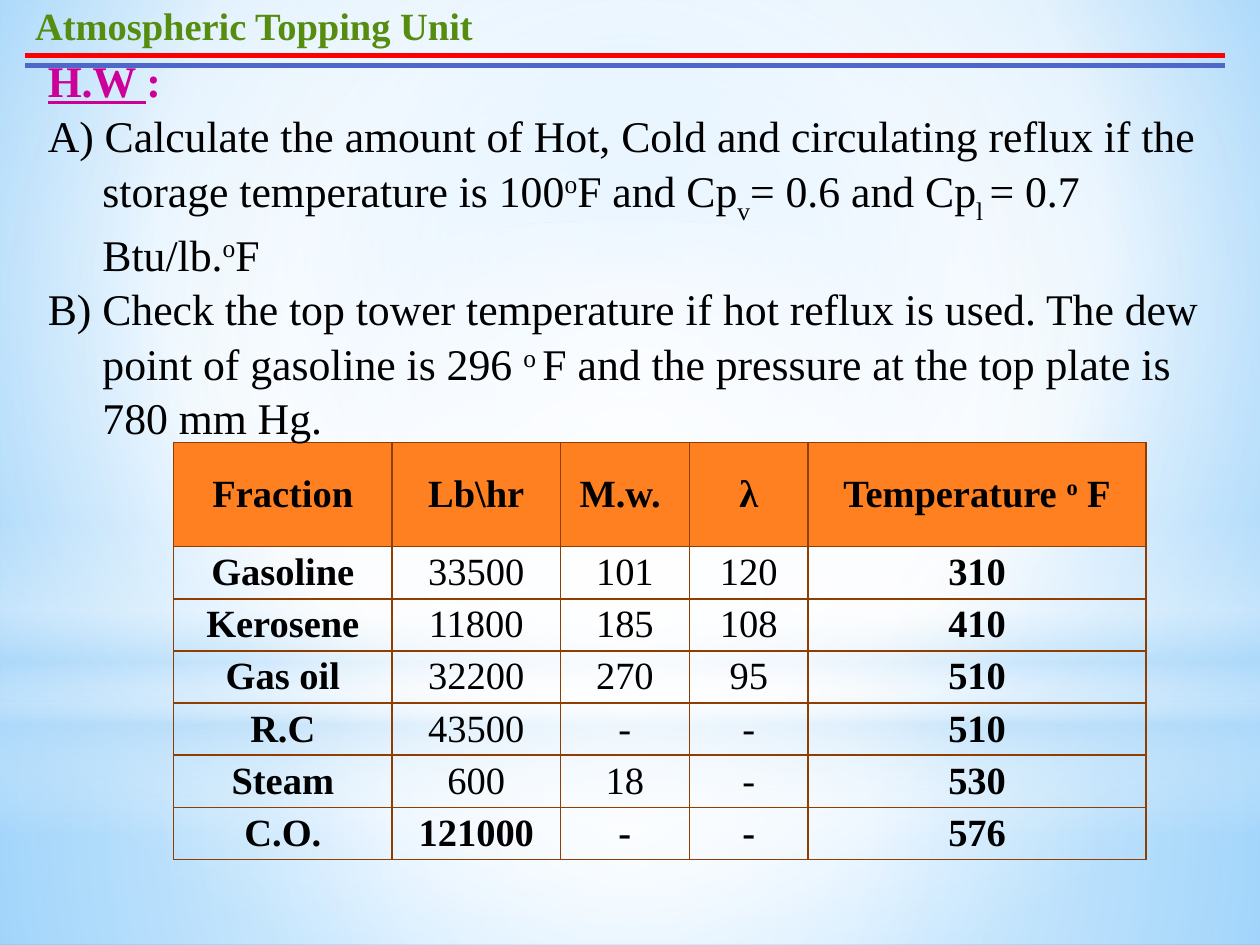
from lxml import etree
from pptx import Presentation
from pptx.dml.color import RGBColor
from pptx.enum.shapes import MSO_CONNECTOR, MSO_SHAPE
from pptx.enum.text import MSO_ANCHOR, MSO_AUTO_SIZE, PP_ALIGN
from pptx.oxml import parse_xml
from pptx.oxml.ns import nsdecls, qn
from pptx.util import Pt

RECTANGLE, OVAL = MSO_SHAPE.RECTANGLE, MSO_SHAPE.OVAL
STRAIGHT = MSO_CONNECTOR.STRAIGHT
MIDDLE, TOP = MSO_ANCHOR.MIDDLE, MSO_ANCHOR.TOP
CENTER = PP_ALIGN.CENTER
FIT_SHAPE = MSO_AUTO_SIZE.SHAPE_TO_FIT_TEXT

FONT = "Times New Roman"
SUPER, SUB = 30, -30
HANGING_INDENT = 31.25

# Each line of the exercise: (is it indented, its pieces of text)
EXERCISE = [
    (False, ["A) Calculate the amount of Hot, Cold and circulating reflux if the"]),
    (True, ["storage temperature is 100", ("o", SUPER), "F and Cp", ("v", SUB),
            "= 0.6 and Cp", ("l ", SUB), "= 0.7"]),
    (True, ["Btu/lb.", ("o", SUPER), "F"]),
    (False, ["B) Check the top tower temperature if hot reflux is used. The dew"]),
    (True, ["point of gasoline is 296 ", ("o ", SUPER),
            "F and the pressure at the top plate is"]),
    (True, ["780 mm Hg."]),
]

COLUMN_WIDTHS = [124.8, 96.3, 73.6, 68, 193]
HEADER_HEIGHT, ROW_HEIGHT = 59.6, 29.8
FRACTIONS = [
    ["Fraction", "Lb\\hr", "M.w. ", "λ", ["Temperature ", ("o", SUPER), " F"]],
    ["Gasoline", "33500", "101", "120", "310"],
    ["Kerosene", "11800", "185", "108", "410"],
    ["Gas oil", "32200", "270", "95", "510"],
    ["R.C", "43500", "-", "-", "510"],
    ["Steam", "600", "18", "-", "530"],
    ["C.O.", "121000", "-", "-", "576"],
]


def color(value):
    return RGBColor.from_string(value)


def set_gradient(fill, properties, stops, center=None):
    """Radial around center (left, top, right, bottom), else top to bottom."""
    fill.solid()
    stop_xml = "".join(
        f'<a:gs pos="{position * 1000}"><a:srgbClr val="{value}">'
        f'<a:alpha val="{alpha * 1000}"/></a:srgbClr></a:gs>'
        for position, value, alpha in stops)
    if center:
        left, top, right, bottom = (side * 1000 for side in center)
        direction = (f'<a:path path="circle"><a:fillToRect l="{left}" t="{top}" '
                     f'r="{right}" b="{bottom}"/></a:path>')
    else:
        direction = '<a:lin ang="5400000" scaled="0"/>'
    gradient = parse_xml(f'<a:gradFill {nsdecls("a")} rotWithShape="1">'
                         f'<a:gsLst>{stop_xml}</a:gsLst>{direction}</a:gradFill>')
    properties.replace(properties.find(qn("a:solidFill")), gradient)


def add_glow(page, kind, top, height, stops, center=None):
    glow = page.shapes.add_shape(kind, 0, Pt(top), Pt(720), Pt(height))
    glow.shadow.inherit = False
    glow.line.fill.background()
    set_gradient(glow.fill, glow._element.spPr, stops, center)


def add_background(page):
    background = page.background.fill
    background.solid()
    set_gradient(background, page._element.cSld.bg.bgPr,
                 [(0, "9ED5FF", 100), (60, "FFFFFF", 100), (100, "5BB9FF", 100)],
                 (20, 10, 20, 60))
    middle = (50, 50, 50, 50)
    add_glow(page, RECTANGLE, 402, 138,
             [(0, "FFFFFF", 91), (37, "FFFFFF", 76), (100, "B4DCFA", 79)], middle)
    add_glow(page, RECTANGLE, 0, 402,
             [(0, "FFFFFF", 89), (48, "FFFFFF", 62), (100, "B4DCFA", 79)], middle)
    add_glow(page, RECTANGLE, 297, 180,
             [(0, "FFFFFF", 0), (29, "FFFFFF", 30), (45, "B4DCFA", 40),
              (55, "FFFFFF", 26), (65, "B4DCFA", 60), (100, "FFFFFF", 0)])
    add_glow(page, OVAL, 126, 402, [(0, "FFFFFF", 100), (56, "FFFFFF", 0)], middle)


def add_rule(page, y, line_color):
    rule = page.shapes.add_connector(STRAIGHT, Pt(14.4), Pt(y), Pt(700), Pt(y))
    rule.line.color.rgb = color(line_color)
    rule.line.width = Pt(3)
    etree.SubElement(rule._element.spPr, qn("a:effectLst"))


def add_text_box(page, left, top, width, height, anchor):
    box = page.shapes.add_textbox(Pt(left), Pt(top), Pt(width), Pt(height))
    frame = box.text_frame
    frame.word_wrap = True
    frame.auto_size = FIT_SHAPE
    frame.vertical_anchor = anchor
    return frame


def write(para, pieces, size, text_color="000000", bold=False):
    para.font.name = FONT
    para.font.size = Pt(size)
    para.font.bold = bold
    para.font.color.rgb = color(text_color)
    for piece in pieces:
        text, baseline = (piece, 0) if isinstance(piece, str) else piece
        span = para.add_run()
        span.text = text
        if baseline:
            span._r.get_or_add_rPr().set("baseline", str(baseline * 1000))


def add_exercise(page):
    frame = add_text_box(page, 20.2, 31.7, 680.4, 219.6, MIDDLE)
    heading = frame.paragraphs[0]
    heading.line_spacing = 1.04
    write(heading, ["H.W ", ":"], 25, "CC0099", bold=True)
    heading.runs[0].font.underline = True
    for indented, pieces in EXERCISE:
        para = frame.add_paragraph()
        para.line_spacing = 1.04
        write(para, pieces, 25)
        if indented:
            para._p.get_or_add_pPr().set("marL", str(Pt(HANGING_INDENT)))


def set_borders(cell, line_color, width):
    properties = cell._tc.get_or_add_tcPr()
    for index, side in enumerate(("lnL", "lnR", "lnT", "lnB")):
        properties.insert(index, parse_xml(
            f'<a:{side} {nsdecls("a")} w="{Pt(width)}"><a:solidFill>'
            f'<a:srgbClr val="{line_color}"/></a:solidFill></a:{side}>'))


def add_fraction_table(page):
    rows, columns = len(FRACTIONS), len(COLUMN_WIDTHS)
    table = page.shapes.add_table(
        rows, columns, Pt(99.2), Pt(252.8), Pt(sum(COLUMN_WIDTHS)),
        Pt(HEADER_HEIGHT + ROW_HEIGHT * (rows - 1))).table
    table.first_row = table.horz_banding = False
    for column, width in zip(table.columns, COLUMN_WIDTHS):
        column.width = Pt(width)
    for r, values in enumerate(FRACTIONS):
        table.rows[r].height = Pt(ROW_HEIGHT if r else HEADER_HEIGHT)
        for c, value in enumerate(values):
            cell = table.cell(r, c)
            cell.vertical_anchor = MIDDLE
            cell.margin_left = cell.margin_right = Pt(5)
            cell.margin_top = cell.margin_bottom = 0
            if r == 0:
                cell.fill.solid()
                cell.fill.fore_color.rgb = color("FF8021")
            else:
                cell.fill.background()
            set_borders(cell, "903E00", 1)
            para = cell.text_frame.paragraphs[0]
            para.alignment = CENTER
            bold = r in (0, rows - 1) or c in (0, columns - 1)
            write(para, [value] if isinstance(value, str) else value, 22, bold=bold)


def main():
    deck = Presentation()
    deck.slide_width, deck.slide_height = Pt(720), Pt(540)
    page = deck.slides.add_slide(deck.slide_layouts[6])
    add_background(page)

    # Title with its double rule
    add_rule(page, 37.4, "4E67C8")
    add_rule(page, 31.7, "FF0000")
    title = add_text_box(page, 8.6, -2.2, 288, 33.8, TOP)
    title.margin_left = Pt(11.5)
    write(title.paragraphs[0], ["Atmospheric Topping Unit"], 22, "568D11", bold=True)

    # Exercise and its data
    add_fraction_table(page)
    add_exercise(page)
    deck.save("out.pptx")


if __name__ == "__main__":
    main()
